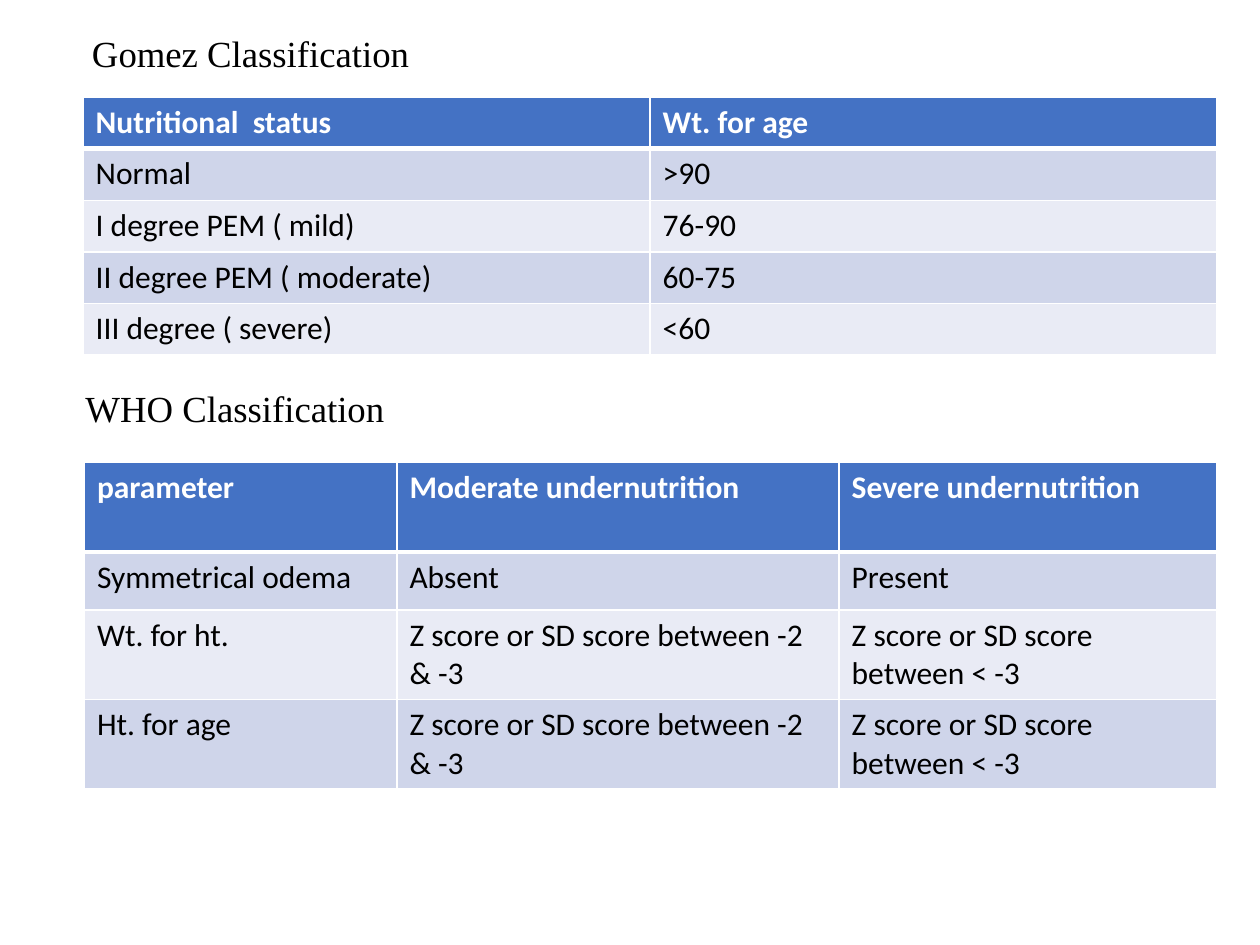
from dataclasses import dataclass

from lxml.etree import SubElement
from pptx import Presentation
from pptx.dml.color import RGBColor
from pptx.enum.text import MSO_ANCHOR, MSO_AUTO_SIZE, PP_ALIGN
from pptx.oxml.ns import qn
from pptx.util import Inches, Pt

WHITE, BLACK, BLUE = "FFFFFF", "000000", "4472C4"
BANDS = ("CFD5EA", "E9EBF5")
HEADING_FONT, BODY_FONT = "Times New Roman", "Calibri"


@dataclass
class TableBlock:
    left: float
    top: float
    widths: list[float]
    heights: list[float]
    rows: list[tuple[str, ...]]


def color(value: str) -> RGBColor:
    return RGBColor.from_string(value)


def style_text(frame, font_name: str, size: float, text_color: str, bold: bool = False) -> None:
    for para in frame.paragraphs:
        for span in para.runs:
            span.font.name = font_name
            span.font.size = Pt(size)
            span.font.bold = bold
            span.font.color.rgb = color(text_color)


def add_borders(cell, bottom: float) -> None:
    properties = cell._tc.get_or_add_tcPr()
    for side, width in (("L", 1), ("R", 1), ("T", 1), ("B", bottom)):
        line = SubElement(properties, qn(f"a:ln{side}"), w=str(Pt(width)))
        fill = SubElement(line, qn("a:solidFill"))
        SubElement(fill, qn("a:srgbClr"), val=WHITE)


def draw_table(page, block: TableBlock) -> None:
    table = page.shapes.add_table(
        len(block.rows), len(block.widths), Inches(block.left), Inches(block.top),
        Inches(sum(block.widths)), Inches(sum(block.heights))).table
    for column, width in zip(table.columns, block.widths):
        column.width = Inches(width)
    for index, (row, height, texts) in enumerate(zip(table.rows, block.heights, block.rows)):
        row.height = Inches(height)
        header = index == 0
        for cell, text in zip(row.cells, texts):
            cell.text_frame.text = text
            style_text(cell.text_frame, BODY_FONT, 18, WHITE if header else BLACK, header)
            # The header and the row below it share the thick rule
            add_borders(cell, 3 if header else 1)
            cell.fill.solid()
            cell.fill.fore_color.rgb = color(BLUE if header else BANDS[(index - 1) % 2])


GOMEZ = TableBlock(0.66, 0.77, [4.5, 4.5], [0.41] * 5, [
    ("Nutritional  status", "Wt. for age"),
    ("Normal", ">90"),
    ("I degree PEM ( mild)", "76-90"),
    ("II degree PEM ( moderate)", "60-75"),
    ("III degree ( severe)", "<60"),
])
Z_SCORES = ("Z score or SD score between -2 & -3", "Z score or SD score between < -3")
WHO = TableBlock(0.67, 3.67, [2.48, 3.51, 3], [0.71, 0.46, 0.71, 0.71], [
    ("parameter", "Moderate undernutrition", "Severe undernutrition"),
    ("Symmetrical odema", "Absent", "Present"),
    ("Wt. for ht.", *Z_SCORES),
    ("Ht. for age", *Z_SCORES),
])


def main() -> None:
    deck = Presentation()
    deck.slide_width, deck.slide_height = Inches(10), Inches(7.5)
    page = deck.slides.add_slide(deck.slide_layouts[5])

    # Title
    title = page.shapes.title
    title.left, title.top = Inches(0.63), Inches(0.11)
    title.width, title.height = Inches(3.92), Inches(0.67)
    title.text_frame.text = "Gomez Classification"
    title.text_frame.vertical_anchor = MSO_ANCHOR.MIDDLE
    title.text_frame.paragraphs[0].alignment = PP_ALIGN.LEFT
    title.text_frame.paragraphs[0].line_spacing = 0.9
    style_text(title.text_frame, HEADING_FONT, 21, BLACK)

    draw_table(page, GOMEZ)

    # Second heading
    box = page.shapes.add_textbox(Inches(0.58), Inches(3.01), Inches(2.68), Inches(0.45))
    box.text_frame.text = "WHO Classification"
    box.text_frame.word_wrap = False
    box.text_frame.auto_size = MSO_AUTO_SIZE.SHAPE_TO_FIT_TEXT
    style_text(box.text_frame, HEADING_FONT, 21, BLACK)

    draw_table(page, WHO)
    deck.save("out.pptx")


if __name__ == "__main__":
    main()
